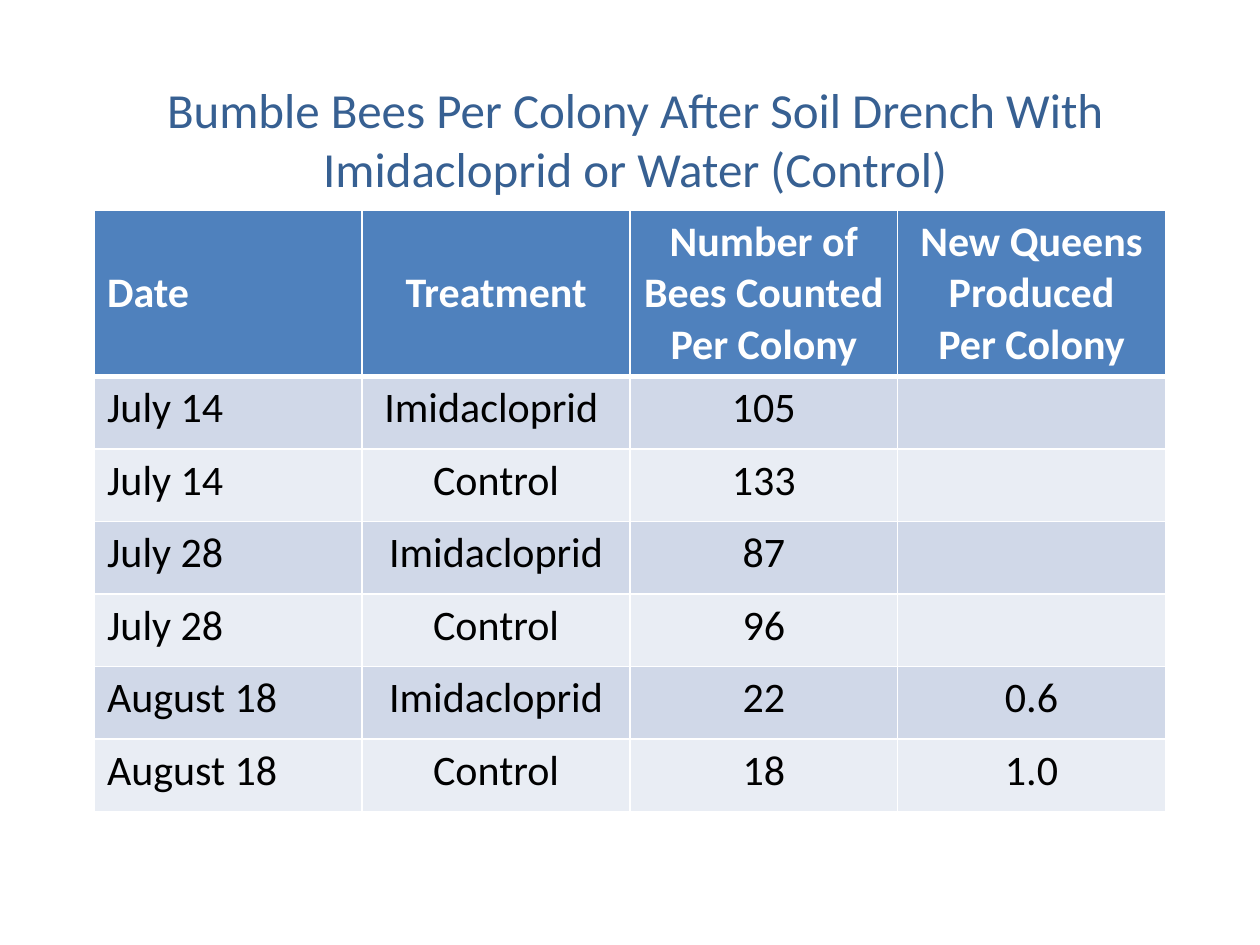
from dataclasses import dataclass

from lxml import etree
from pptx import Presentation
from pptx.dml.color import RGBColor
from pptx.enum import text as t
from pptx.oxml import ns
from pptx.util import Inches, Pt


@dataclass(frozen=True)
class Theme:
    """Colours, font and type sizes of the slide."""
    font: str = "Calibri"
    title: str = "376092"
    header: str = "4F81BD"
    bands: tuple = ("D0D8E8", "E9EDF4")
    light: str = "FFFFFF"
    dark: str = "000000"
    title_size: int = 28
    table_size: int = 24


HEADER = ["Date", "Treatment", "Number of Bees Counted\nPer Colony",
          "New Queens Produced\nPer Colony"]
COLONIES = [
    ["July 14", "Imidacloprid ", "105", ""],
    ["July 14", "Control", "133", ""],
    ["July 28", "Imidacloprid", "87", ""],
    ["July 28", "Control", "96", ""],
    ["August 18", "Imidacloprid", "22", "0.6"],
    ["August 18", "Control", "18", "1.0"],
]


def write(frame, content, *, font, size, color, bold=False, align=t.PP_ALIGN.CENTER):
    """Fill a text frame, one paragraph per line, in a single format."""
    frame.text = content
    for paragraph in frame.paragraphs:
        paragraph.alignment = align
        paragraph.font.size = Pt(size)
        for run in paragraph.runs:
            run.font.name = font
            run.font.size = Pt(size)
            run.font.bold = bold
            run.font.color.rgb = RGBColor.from_string(color)


def set_border(cell, side, color, width):
    """Add one solid border to a cell, ahead of its fill."""
    line = etree.Element(ns.qn(f"a:ln{side}"), w=str(Pt(width)))
    fill = etree.SubElement(line, ns.qn("a:solidFill"))
    etree.SubElement(fill, ns.qn("a:srgbClr"), val=color)
    properties = cell._tc.get_or_add_tcPr()
    properties.insert("LRTB".index(side), line)


class SlideBuilder:
    """Holds the theme and the current slide."""

    def __init__(self, slide, theme):
        self.slide = slide
        self.theme = theme

    def title(self, content, left, top, width, height):
        """Add the centred title."""
        box = self.slide.shapes.add_textbox(
            Inches(left), Inches(top), Inches(width), Inches(height))
        box.text_frame.word_wrap = True
        write(box.text_frame, content, font=self.theme.font,
              size=self.theme.title_size, color=self.theme.title)

    def table(self, header, body, left, top, width, height, header_height):
        """Add a banded table with equal columns and equal body rows."""
        rows = [header, *body]
        table = self.slide.shapes.add_table(
            len(rows), len(header), Inches(left), Inches(top),
            Inches(width), Inches(height)).table
        for column in table.columns:
            column.width = Inches(width / len(header))
        for index, values in enumerate(rows):
            is_header = index == 0
            row_height = header_height if is_header else (height - header_height) / len(body)
            table.rows[index].height = Inches(row_height)
            for column, content in enumerate(values):
                self.cell(table.cell(index, column), content, index, column)

    def cell(self, cell, content, row, column):
        """Format one table cell by its row and column."""
        theme = self.theme
        is_header = row == 0
        cell.fill.solid()
        cell.fill.fore_color.rgb = RGBColor.from_string(
            theme.header if is_header else theme.bands[(row - 1) % 2])
        cell.vertical_anchor = t.MSO_ANCHOR.MIDDLE if is_header else t.MSO_ANCHOR.TOP
        write(cell.text_frame, content, font=theme.font, size=theme.table_size,
              color=theme.light if is_header else theme.dark, bold=is_header,
              align=t.PP_ALIGN.LEFT if column == 0 else t.PP_ALIGN.CENTER)
        widths = {"L": 1, "R": 1, "T": 3 if row == 1 else 1, "B": 3 if is_header else 1}
        for side, width in widths.items():
            set_border(cell, side, theme.light, width)


def main():
    """Build and save the slide."""
    presentation = Presentation()
    presentation.slide_width = Inches(10)
    presentation.slide_height = Inches(7.5)
    slide = presentation.slides.add_slide(presentation.slide_layouts[6])
    builder = SlideBuilder(slide, Theme())
    builder.table(HEADER, COLONIES, 0.75, 1.67, 8.5, 4.75, header_height=1.3)
    builder.title("Bumble Bees Per Colony After Soil Drench With "
                  "Imidacloprid or Water (Control)", 0.83, 0.58, 8.42, 1.04)
    presentation.save("out.pptx")


if __name__ == "__main__":
    main()
